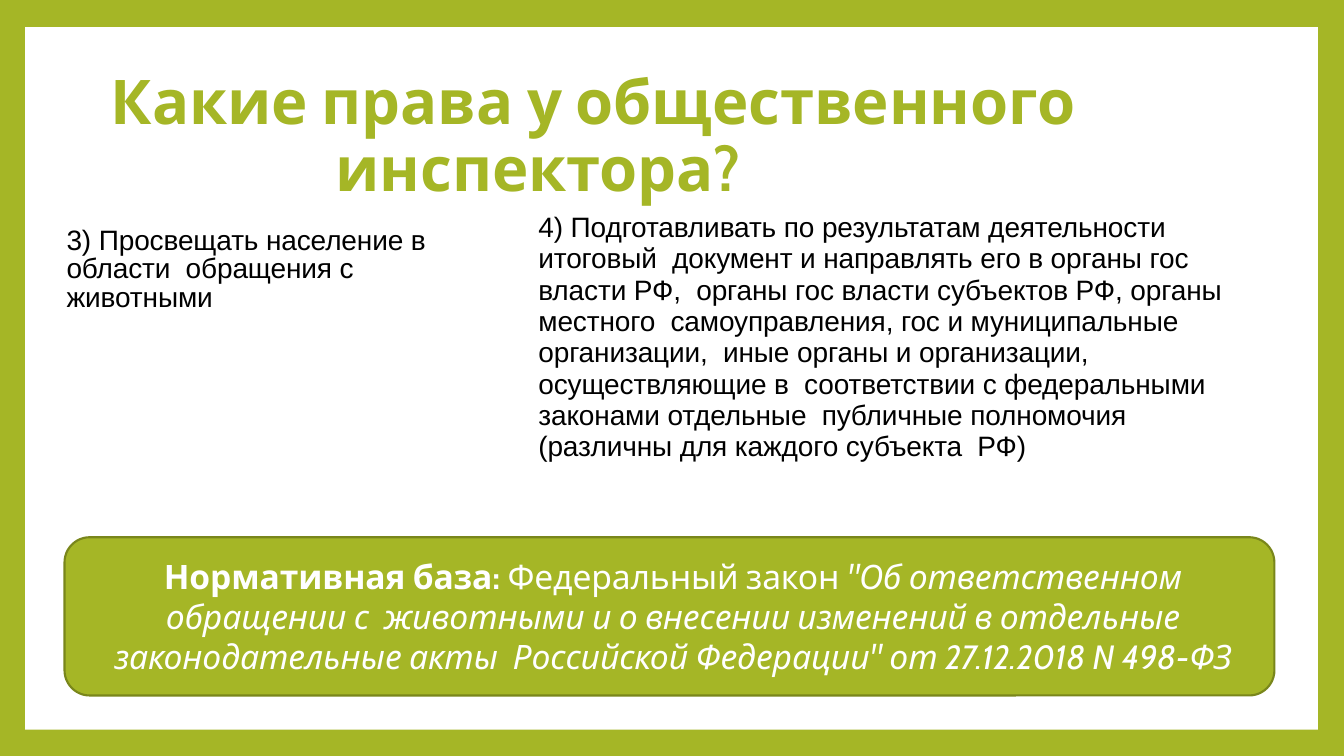
"""Builds a slide on the rights of a public inspector."""
from lxml import etree
from pptx import Presentation
from pptx.dml.color import RGBColor
from pptx.enum.shapes import MSO_SHAPE
from pptx.enum.text import MSO_ANCHOR, MSO_AUTO_SIZE, PP_ALIGN
from pptx.oxml.ns import qn
from pptx.util import Inches, Pt

RECTANGLE, ROUNDED = MSO_SHAPE.RECTANGLE, MSO_SHAPE.ROUNDED_RECTANGLE
LEFT, CENTER = PP_ALIGN.LEFT, PP_ALIGN.CENTER
TOP, NO_FIT = MSO_ANCHOR.TOP, MSO_AUTO_SIZE.NONE

COLORS = {"green": "A5B626", "outline": "79861B", "white": "FFFFFF", "black": "000000"}
SLIDE_WIDTH, SLIDE_HEIGHT = 13.33, 7.5

TITLE = "Какие права у общественного  инспектора?"
EDUCATE = "3) Просвещать население в области  обращения с животными"
REPORT = (
    "4) Подготавливать по результатам деятельности итоговый  документ и направлять "
    "его в органы гос власти РФ,  органы гос власти субъектов РФ, органы местного  "
    "самоуправления, гос и муниципальные организации,  иные органы и организации, "
    "осуществляющие в  соответствии с федеральными законами отдельные  публичные "
    "полномочия (различны для каждого субъекта  РФ)"
)
LEGAL_BASIS = [
    ("Нормативная база: ", {"bold": True}),
    ("Федеральный закон ", {}),
    ("\"Об ответственном обращении с  животными и о внесении изменений в отдельные "
     "законодательные акты  Российской Федерации\" от 27.12.2018 N 498-ФЗ",
     {"italic": True}),
]

FRAME = [
    ((0, 0, SLIDE_WIDTH, SLIDE_HEIGHT), "green"),
    ((0.25, 0.27, 12.82, 6.97), "white"),
]
TITLE_BOX = (0.19, 0.44, 12.92, 0.94)
EDUCATE_BOX = (0.65, 2.22, 4.1, 0.88)
REPORT_BOX = (5.33, 2.08, 7.23, 2.54)
LEGAL_BOX = (0.64, 5.33, 12, 1.57)
CORNER_RADIUS = 0.25


def place(shape, box):
    shape.left, shape.top, shape.width, shape.height = map(Inches, box)


def add_panel(slide, kind, box, fill, outline=None):
    shape = slide.shapes.add_shape(kind, *map(Inches, box))
    shape.shadow.inherit = False
    shape.fill.solid()
    shape.fill.fore_color.rgb = RGBColor.from_string(COLORS[fill])
    if outline:
        shape.line.color.rgb = RGBColor.from_string(COLORS[outline])
        shape.line.width = Pt(1.5)
    else:
        shape.line.fill.background()
    return shape


def write(shape, runs, *, font, size, color, insets=(0, 0, 0), align=LEFT,
          before=0, spacing=1.0, margin=0, indent=0, tracking=-0.1):
    """Fill a shape with one paragraph of formatted runs; insets are left, top, right."""
    frame = shape.text_frame
    frame.word_wrap = True
    frame.auto_size = NO_FIT
    frame.vertical_anchor = TOP
    frame.margin_left, frame.margin_top, frame.margin_right = map(Inches, insets)
    frame.margin_bottom = 0
    paragraph = frame.paragraphs[0]
    paragraph.alignment = align
    paragraph.space_before = Pt(before)
    paragraph.line_spacing = spacing
    properties = paragraph._p.get_or_add_pPr()
    properties.set("marL", str(Inches(margin)))
    properties.set("indent", str(Inches(indent)))
    etree.SubElement(properties, qn("a:buNone"))
    for text, style in runs:
        run = paragraph.add_run()
        run.text = text
        run.font.name = font
        run.font.size = Pt(size)
        run.font.color.rgb = RGBColor.from_string(COLORS[color])
        run.font.bold = style.get("bold", False)
        run.font.italic = style.get("italic", False)
        run._r.get_or_add_rPr().set("spc", str(round(tracking * 100)))


def main():
    presentation = Presentation()
    presentation.slide_width = Inches(SLIDE_WIDTH)
    presentation.slide_height = Inches(SLIDE_HEIGHT)
    slide = presentation.slides.add_slide(presentation.slide_layouts[3])
    title, educate, report = slide.placeholders

    for box, fill in reversed(FRAME):
        panel = add_panel(slide, RECTANGLE, box, fill)
        slide.shapes._spTree.insert(2, panel._element)

    place(title, TITLE_BOX)
    write(title, [(TITLE, {"bold": True})], font="Cabin", size=44, color="green",
          insets=(0, 0.26, 0), before=7, spacing=Pt(47.5), margin=3.14, indent=-2.23)

    place(educate, EDUCATE_BOX)
    write(educate, [(EDUCATE, {})], font="Arial", size=20, color="black",
          insets=(0, 0.04, 0), before=2.8, spacing=Pt(20.2), margin=0.01)

    place(report, REPORT_BOX)
    write(report, [(REPORT, {})], font="Arial", size=20, color="black",
          insets=(0, 0.03, 0), before=2.4, spacing=0.93, margin=0.01)

    legal = add_panel(slide, ROUNDED, LEGAL_BOX, "green", "outline")
    legal.adjustments[0] = CORNER_RADIUS / LEGAL_BOX[3]
    write(legal, LEGAL_BASIS, font="Cabin", size=24, color="white",
          insets=(0.25, 0.11, 0.19), align=CENTER, before=1, margin=0.01)

    presentation.save("out.pptx")


if __name__ == "__main__":
    main()
